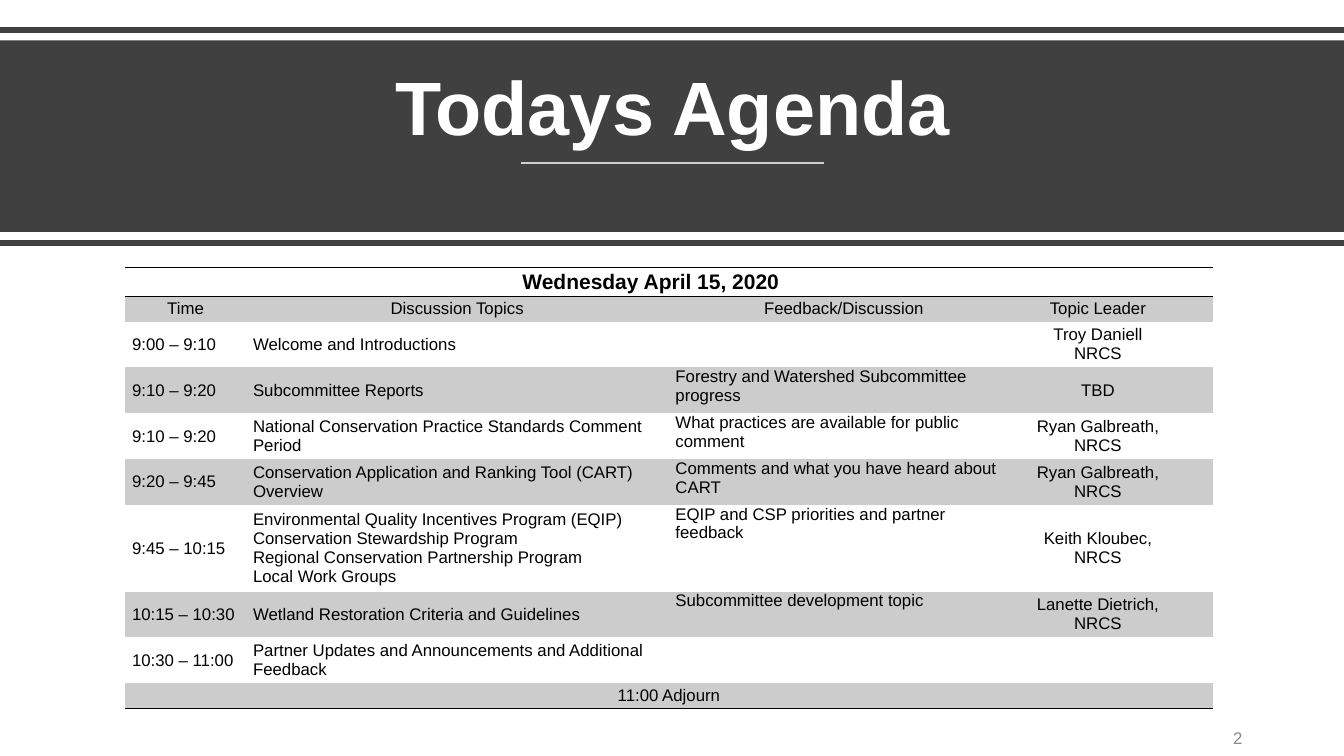
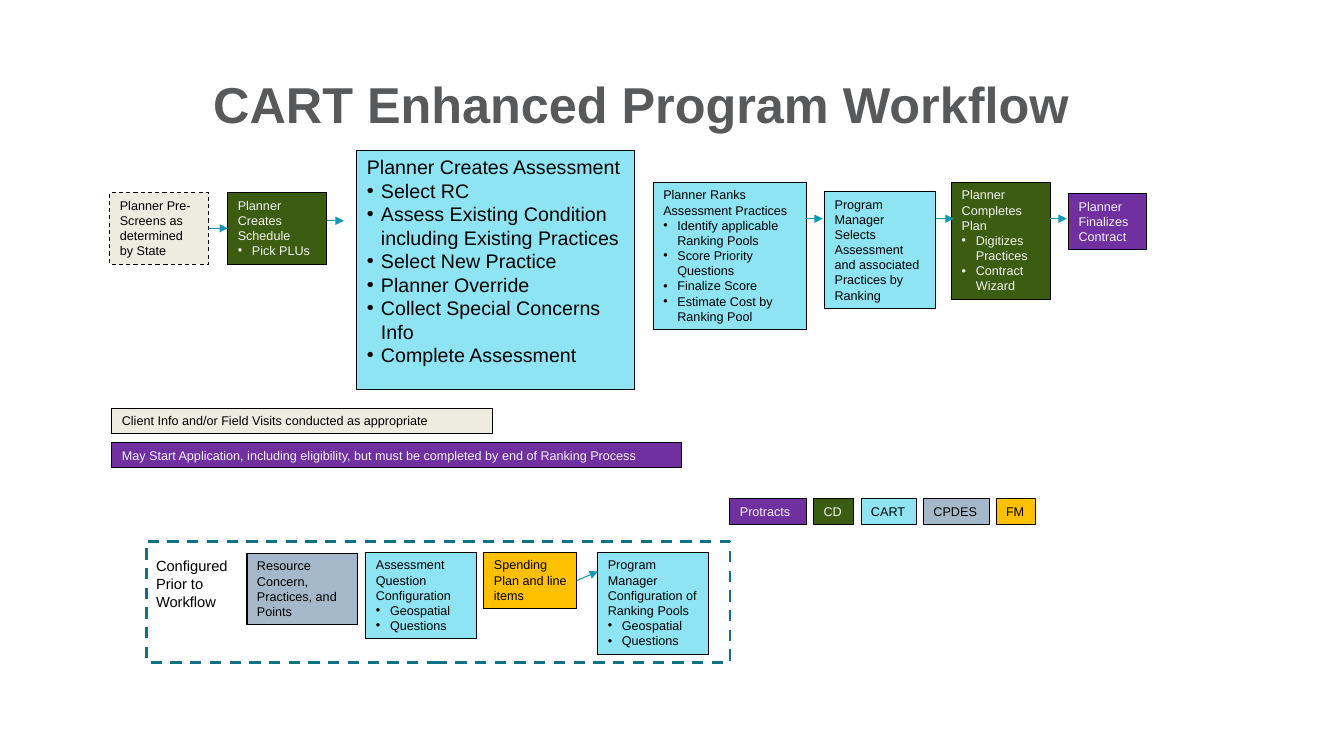
"""Build the agenda slide and the CART workflow slide."""
from lxml.etree import SubElement
from pptx import Presentation
from pptx.dml.color import RGBColor
from pptx.enum.dml import MSO_LINE
from pptx.enum.shapes import MSO_CONNECTOR, MSO_SHAPE
from pptx.enum.text import MSO_ANCHOR as Anchor, MSO_AUTO_SIZE, PP_ALIGN as Align
from pptx.oxml.ns import qn
from pptx.util import Inches, Pt

COLORS = {
    "black": "000000", "white": "FFFFFF", "pale": "F2F2F2", "band": "404040",
    "rule": "CFCFCF", "stripe": "CCCCCC", "number": "898989", "heading": "58595B",
    "green": "3C5D11", "cream": "EEECE1", "cyan": "8EE4F3", "purple": "7030A0",
    "slate": "A5B8CA", "gold": "FFC000", "arrow": "0F99B2", "frame": "0E7284",
}
FONT = "Arial"
NO_STYLE = "{2D5ABB26-0587-4C30-8999-92F81FD0307C}"
LIGHT_TEXT_FILLS = {"green", "purple"}


def rgb(name):
    """Return the named colour."""
    return RGBColor.from_string(COLORS[name])


def place(shape, box):
    """Move and size a shape in inches."""
    shape.left, shape.top, shape.width, shape.height = map(Inches, box)


class Deck:
    """Hold the style and the current slide."""

    def __init__(self):
        """Start a widescreen presentation."""
        self.presentation = Presentation()
        self.presentation.slide_width = Inches(13.33)
        self.presentation.slide_height = Inches(7.5)
        self.slide = None

    def add_slide(self):
        """Add a title-only slide and make it current."""
        self.slide = self.presentation.slides.add_slide(self.presentation.slide_layouts[5])

    def format(self, frame, size, color, bold=False, align=Align.LEFT):
        """Style every paragraph of a text frame."""
        for paragraph in frame.paragraphs:
            paragraph.alignment = align
            for font in [paragraph.font] + [run.font for run in paragraph.runs]:
                font.name, font.size, font.bold = FONT, Pt(size), bold
                font.color.rgb = rgb(color)

    def title(self, text, box, size, color, anchor, spacing=1.0):
        """Fill the title placeholder and bring it to the front."""
        heading = self.slide.shapes.title
        place(heading, box)
        frame = heading.text_frame
        frame.text = text
        frame.word_wrap = True
        frame.auto_size = MSO_AUTO_SIZE.NONE
        frame.vertical_anchor = anchor
        self.format(frame, size, color, True, Align.CENTER)
        frame.paragraphs[0].line_spacing = spacing
        self.slide.shapes._spTree.append(heading._element)

    def line(self, start, end, color, width, arrow=False):
        """Draw a straight line, with an arrowhead if asked."""
        connector = self.slide.shapes.add_connector(
            MSO_CONNECTOR.STRAIGHT, *map(Inches, start + end))
        connector.line.color.rgb = rgb(color)
        connector.line.width = Pt(width)
        if arrow:
            SubElement(connector.line._get_or_add_ln(), qn("a:tailEnd"), type="triangle")
        SubElement(connector._element.spPr, qn("a:effectLst"))
        return connector

    def arrow(self, start, end, source=None, target=None):
        """Draw a workflow arrow, joined to the boxes given."""
        connector = self.line(start, end, "arrow", 0.75, True)
        if source is not None:
            connector.begin_connect(source, 3)
        if target is not None:
            connector.end_connect(target, 1)

    def rectangle(self, box, fill=None, line=None, width=0.75, dashed=False):
        """Draw a flat rectangle."""
        shape = self.slide.shapes.add_shape(MSO_SHAPE.RECTANGLE, *map(Inches, box))
        shape.shadow.inherit = False
        if fill:
            shape.fill.solid()
            shape.fill.fore_color.rgb = rgb(fill)
        else:
            shape.fill.background()
        if line:
            shape.line.color.rgb = rgb(line)
            shape.line.width = Pt(width)
            if dashed:
                shape.line.dash_style = MSO_LINE.DASH
        else:
            shape.line.fill.background()
        return shape

    def step(self, box, fill, text, bullets=(), size=9, dashed=False):
        """Draw a workflow box with a heading and bullets."""
        shape = self.rectangle(box, fill, "black", dashed=dashed)
        frame = shape.text_frame
        frame.word_wrap = True
        frame.vertical_anchor = Anchor.TOP
        frame.text = text
        for item in bullets:
            paragraph = frame.add_paragraph()
            paragraph.text = item
            properties = paragraph._p.get_or_add_pPr()
            properties.set("marL", str(Inches(0.14)))
            properties.set("indent", str(-Inches(0.14)))
            SubElement(properties, qn("a:buFont"), typeface=FONT)
            SubElement(properties, qn("a:buChar"), char="•")
        self.format(frame, size, "pale" if fill in LIGHT_TEXT_FILLS else "black")
        return shape

    def label(self, box, text, size, color, align=Align.LEFT, anchor=Anchor.TOP):
        """Add a plain text box."""
        frame = self.slide.shapes.add_textbox(*map(Inches, box)).text_frame
        frame.word_wrap = True
        frame.vertical_anchor = anchor
        frame.text = text
        self.format(frame, size, color, align=align)

    def border(self, cell, sides):
        """Rule the given sides of a cell in black."""
        properties = cell._tc.get_or_add_tcPr()
        for position, side in enumerate(sides):
            edge = SubElement(properties, qn(f"a:ln{side}"), w=str(Pt(1)))
            fill = SubElement(edge, qn("a:solidFill"))
            SubElement(fill, qn("a:srgbClr"), val=COLORS["black"])
            properties.insert(position, edge)

    def agenda(self, box, widths, heights, rows):
        """Add the striped agenda table."""
        graphic = self.slide.shapes.add_table(len(rows), len(widths), *map(Inches, box))
        table = graphic.table
        table.first_row = table.horz_banding = False
        table._tbl.tblPr.find(qn("a:tableStyleId")).text = NO_STYLE
        for column, width in zip(table.columns, widths):
            column.width = Inches(width)
        last = len(rows) - 1
        for r, (height, texts) in enumerate(zip(heights, rows)):
            table.rows[r].height = Inches(height)
            spanning = len(texts) == 1
            if spanning:
                table.cell(r, 0).merge(table.cell(r, len(widths) - 1))
            for c in range(len(widths)):
                cell = table.cell(r, c)
                cell.margin_left = cell.margin_right = Inches(0.07)
                cell.margin_top = cell.margin_bottom = 0
                if c == 3 or r == 0:
                    cell.margin_right = Inches(0.43)
                body = 1 < r < last
                cell.vertical_anchor = Anchor.TOP if body and c == 2 else Anchor.MIDDLE
                cell.text_frame.text = texts[c] if c < len(texts) else ""
                align = Align.LEFT if body and c < 3 else Align.CENTER
                self.format(cell.text_frame, 15 if r == 0 else 12, "black", r == 0, align)
                if r % 2:
                    cell.fill.solid()
                    cell.fill.fore_color.rgb = rgb("stripe")
                else:
                    cell.fill.background()
                if spanning:
                    self.border(cell, "TB" if r == 0 else "B")


def build_agenda(deck):
    """Build the agenda slide."""
    deck.add_slide()
    deck.rectangle((0, 0.4, 13.33, 1.9), "band")
    for y in (0.3, 2.41):
        deck.line((0, y), (13.33, y), "band", 4)
    deck.title("Todays Agenda", (0.58, 0.54, 12.18, 1.02), 54, "white", Anchor.BOTTOM, 0.9)
    deck.line((5.17, 1.62), (8.17, 1.62), "rule", 1.5)
    deck.label((9.42, 7.13, 3, 0.38), "2", 12, "number", Align.RIGHT, Anchor.MIDDLE)
    rows = [
        ["Wednesday April 15, 2020"],
        ["Time", "Discussion Topics", "Feedback/Discussion", "Topic Leader"],
        ["9:00 – 9:10", "Welcome and Introductions", "", "Troy Daniell\nNRCS"],
        ["9:10 – 9:20", "Subcommittee Reports",
         "Forestry and Watershed Subcommittee progress", "TBD"],
        ["9:10 – 9:20", "National Conservation Practice Standards Comment Period",
         "What practices are available for public comment", "Ryan Galbreath, NRCS"],
        ["9:20 – 9:45", "Conservation Application and Ranking Tool (CART) Overview",
         "Comments and what you have heard about CART", "Ryan Galbreath, NRCS"],
        ["9:45 – 10:15",
         "Environmental Quality Incentives Program (EQIP)\nConservation Stewardship Program\n"
         "Regional Conservation Partnership Program\nLocal Work Groups",
         "EQIP and CSP priorities and partner feedback", "Keith Kloubec, NRCS"],
        ["10:15 – 10:30", "Wetland Restoration Criteria and Guidelines",
         "Subcommittee development topic", "Lanette Dietrich, NRCS"],
        ["10:30 – 11:00", "Partner Updates and Announcements and Additional Feedback", "", ""],
        ["11:00 Adjourn"],
    ]
    heights = [0.29, 0.25] + [0.455] * 4 + [0.86] + [0.455] * 2 + [0.25]
    deck.agenda((1.24, 2.65, 10.79, 4.37), (1.2, 4.19, 3.48, 1.92), heights, rows)


def build_workflow(deck):
    """Build the workflow slide."""
    deck.add_slide()
    deck.title("CART Enhanced Program Workflow", (0.36, 0.51, 12, 1.03), 36, "heading",
               Anchor.MIDDLE)
    prescreen = deck.step((1.09, 1.91, 0.98, 0.71), "cream",
                          "Planner Pre-Screens as determined by State", dashed=True)
    schedule = deck.step((2.26, 1.91, 0.98, 0.71), "green", "Planner Creates Schedule",
                         ["Pick PLUs"])
    deck.step((3.54, 1.49, 2.75, 2.37), "cyan", "Planner Creates Assessment",
              ["Select RC", "Assess Existing Condition including Existing Practices",
               "Select New Practice", "Planner Override", "Collect Special Concerns Info",
               "Complete Assessment"], 14)
    deck.step((6.48, 1.81, 1.52, 1.46), "cyan", "Planner Ranks Assessment Practices",
              ["Identify applicable Ranking Pools", "Score Priority Questions",
               "Finalize Score", "Estimate Cost by Ranking Pool"])
    deck.step((8.18, 1.9, 1.1, 1.16), "cyan",
              "Program Manager Selects Assessment and associated Practices by Ranking")
    deck.step((9.44, 1.81, 0.98, 1.16), "green", "Planner Completes Plan",
              ["Digitizes Practices", "Contract Wizard"])
    deck.step((10.6, 1.92, 0.77, 0.56), "purple", "Planner Finalizes\nContract")
    deck.arrow((2.07, 2.26), (2.26, 2.26), prescreen, schedule)
    for start, end, y in ((3.24, 3.41, 2.19), (7.98, 8.16, 2.17), (9.28, 9.46, 2.17),
                          (10.41, 10.58, 2.17)):
        deck.arrow((start, y), (end, y))

    deck.step((1.11, 4.05, 3.78, 0.25), "cream",
              "Client Info and/or Field Visits conducted as appropriate")
    deck.step((1.11, 4.39, 5.65, 0.25), "purple",
              "May Start Application, including eligibility, but must be completed by end of "
              "Ranking Process")

    left = 7.24
    for system, fill, width in (("Protracts", "purple", 0.76), ("CD", "green", 0.4),
                                ("CART", "cyan", 0.55), ("CPDES", "slate", 0.65),
                                ("FM", "gold", 0.39)):
        deck.step((left, 4.95, width, 0.25), fill, system)
        left += width + 0.07

    deck.rectangle((1.45, 5.37, 5.79, 1.2), line="frame", width=2, dashed=True)
    deck.label((1.45, 5.48, 0.95, 0.63), "Configured Prior to Workflow", 10.5, "black")
    deck.step((2.45, 5.49, 1.1, 0.71), "slate", "Resource Concern, Practices, and Points")
    topics = ["Geospatial", "Questions"]
    deck.step((3.63, 5.48, 1.1, 0.86), "cyan", "Assessment Question Configuration", topics)
    spending = deck.step((4.8, 5.48, 0.92, 0.56), "gold", "Spending Plan and line items")
    deck.step((5.93, 5.48, 1.1, 1.01), "cyan",
              "Program Manager Configuration of Ranking Pools", topics)
    deck.arrow((5.72, 5.76), (5.93, 5.67), spending)


def main():
    """Build and save the presentation."""
    deck = Deck()
    build_agenda(deck)
    build_workflow(deck)
    deck.presentation.save("out.pptx")


if __name__ == "__main__":
    main()
